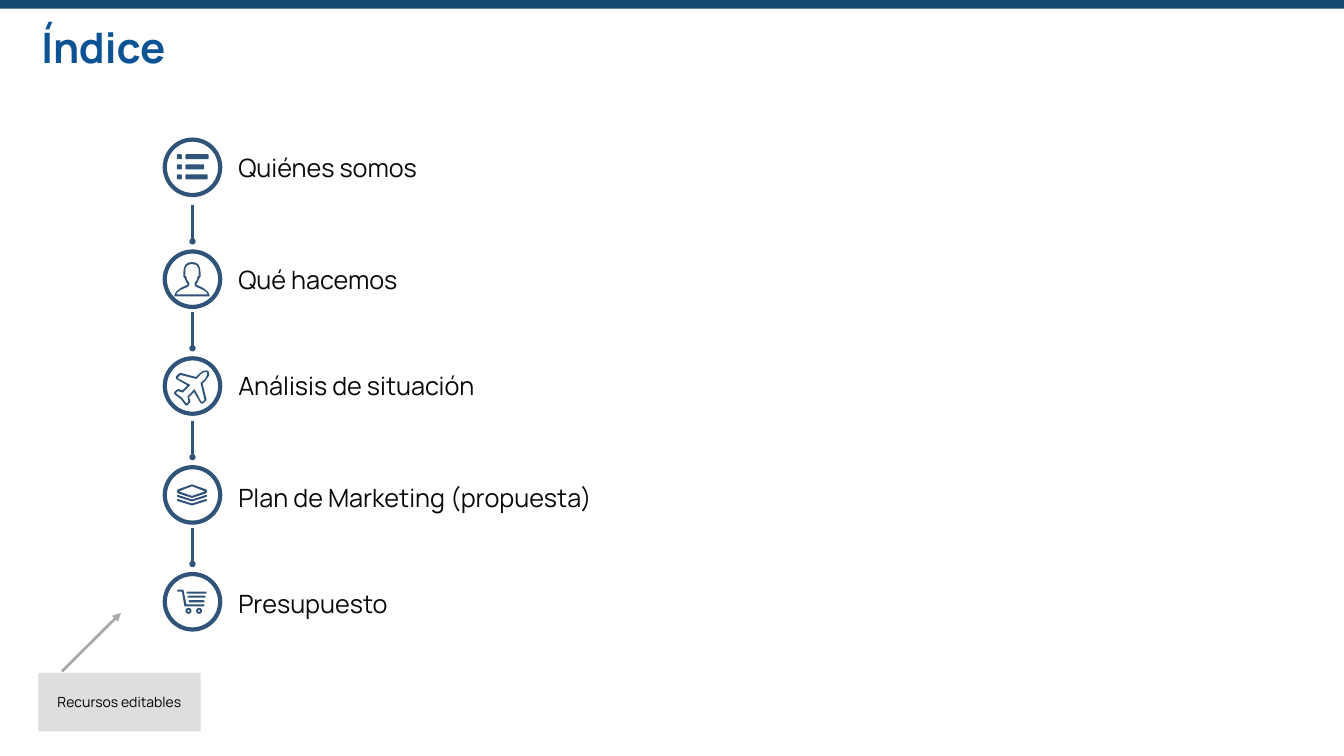
import pptx
import pptx.util
import pptx.oxml
import pptx.dml.color
import pptx.oxml.ns
from pptx.enum.shapes import MSO_CONNECTOR, MSO_SHAPE
from pptx.enum.text import MSO_ANCHOR, MSO_AUTO_SIZE, PP_ALIGN

Inches, Pt = pptx.util.Inches, pptx.util.Pt

FONT = "Manrope"
NAVY = "2F5379"
CENTER_X = 3.82
ICON_X = 3.81
CIRCLE = 1.1

SECTIONS = [
    ("Quiénes somos", 2.77, 2.92, 3.84),
    ("Qué hacemos", 4.99, 5.15, 8.02),
    ("Análisis de situación", 7.11, 7.24, 6.33),
    ("Plan de Marketing (propuesta)", 9.27, 9.47, 7.33),
    ("Presupuesto", 11.39, 11.57, 3.19),
]
LIST_ROWS = [(3.06, 0.46), (3.26, 0.37), (3.46, 0.44)]
PERSON = [
    [(0, 5.2), (0.07, 5.21), (0.13, 5.25), (0.16, 5.32), (0.17, 5.41),
     (0.17, 5.49), (0.14, 5.53), (0.12, 5.59), (0.09, 5.63), (0.09, 5.65),
     (0.22, 5.71), (0.32, 5.79), (0.35, 5.86), (0.35, 5.88)],
    [(0, 5.24), (0.06, 5.25), (0.1, 5.27), (0.13, 5.33), (0.13, 5.43),
     (0.14, 5.47), (0.11, 5.49), (0.1, 5.55), (0.05, 5.62), (0.06, 5.67),
     (0.08, 5.69), (0.22, 5.75), (0.29, 5.8), (0.31, 5.84)],
]
PLANE = [
    [(3.7, 8.05), (3.67, 8.03), (3.59, 7.92), (3.47, 7.83), (3.45, 7.8),
     (3.46, 7.78), (3.51, 7.73), (3.54, 7.72), (3.62, 7.75), (3.72, 7.65),
     (3.5, 7.52), (3.49, 7.5), (3.49, 7.47), (3.55, 7.41), (3.59, 7.4),
     (3.89, 7.48), (3.96, 7.41), (4.03, 7.36), (4.09, 7.35), (4.14, 7.36),
     (4.15, 7.45), (4.09, 7.54), (4.02, 7.61), (4.1, 7.93), (4.08, 7.96),
     (4.02, 8.01), (3.98, 8.0), (3.85, 7.78), (3.75, 7.88), (3.78, 7.96),
     (3.77, 7.99), (3.72, 8.04)],
    [(3.49, 7.8), (3.61, 7.89), (3.7, 8.01), (3.74, 7.97), (3.72, 7.87),
     (3.86, 7.72), (4.0, 7.98), (4.06, 7.94), (3.98, 7.6), (4.07, 7.52),
     (4.11, 7.44), (4.11, 7.39), (4.09, 7.38), (4.04, 7.39), (3.98, 7.43),
     (3.9, 7.52), (3.58, 7.44), (3.52, 7.5), (3.78, 7.64), (3.63, 7.79),
     (3.53, 7.76)],
]
SHEET = [
    [(0, 9.61), (0.28, 9.71), (0.3, 9.75), (0.28, 9.79), (0, 9.88)],
    [(0, 9.65), (0.26, 9.75), (0, 9.84)],
]
SHEET_EDGE = [(0, 9.91), (0.28, 9.82), (0.3, 9.83), (0.29, 9.86), (0, 9.95)]
CART = [(3.7, 11.99), (3.64, 11.7), (3.53, 11.7), (3.51, 11.72), (3.53, 11.74),
        (3.61, 11.74), (3.66, 12.03), (4.04, 12.03), (4.06, 12.01), (4.04, 11.99)]
CART_BARS = [(3.7, 11.74, 0.4), (3.72, 11.82, 0.36), (3.74, 11.91, 0.32)]
WHEELS = [3.68, 3.89]

prs = pptx.Presentation()
prs.slide_width, prs.slide_height = Inches(26.67), Inches(15)
s = prs.slides.add_slide(prs.slide_layouts[6])


def rgb(value):
    return pptx.dml.color.RGBColor.from_string(value)


def paint(sp, fill=None, line=None, width=0):
    sp.shadow.inherit = False
    if fill:
        sp.fill.solid()
        sp.fill.fore_color.rgb = rgb(fill)
    else:
        sp.fill.background()
    if line:
        sp.line.color.rgb = rgb(line)
        sp.line.width = Pt(width)
    else:
        sp.line.fill.background()
    return sp


def shape(kind, x, y, w, h, **look):
    sp = s.shapes.add_shape(kind, Inches(x), Inches(y), Inches(w), Inches(h))
    return paint(sp, **look)


def bar(x, y, w, h, roundness):
    sp = shape(MSO_SHAPE.ROUNDED_RECTANGLE, x, y, w, h, fill=NAVY)
    sp.adjustments[0] = roundness


def outline(contours):
    builder = None
    for contour in contours:
        points = [(Inches(x), Inches(y)) for x, y in contour]
        if builder is None:
            builder = s.shapes.build_freeform(*points[0])
        else:
            builder.move_to(*points[0])
        builder.add_line_segments(points[1:], close=True)
    paint(builder.convert_to_shape(), fill=NAVY)


def mirrored(half, dy=0):
    both = half + [(-x, y) for x, y in reversed(half)]
    return [(ICON_X + x, y + dy) for x, y in both]


def line(x1, y1, x2, y2, color, width, end):
    c = s.shapes.add_connector(MSO_CONNECTOR.STRAIGHT, Inches(x1), Inches(y1),
                               Inches(x2), Inches(y2))
    c.line.color.rgb = rgb(color)
    c.line.width = Pt(width)
    tail = pptx.oxml.parse_xml(f'<a:tailEnd {pptx.oxml.ns.nsdecls("a")} type="{end}"/>')
    c.line._get_or_add_ln().append(tail)
    c._element.spPr.append(pptx.oxml.parse_xml(f'<a:effectLst {pptx.oxml.ns.nsdecls("a")}/>'))


def write(sp, text, size, color, inset, anchor, bold=False, align=PP_ALIGN.LEFT):
    tf = sp.text_frame
    tf.word_wrap = True
    tf.vertical_anchor = anchor
    tf.margin_left = tf.margin_right = tf.margin_top = tf.margin_bottom = Inches(inset)
    tf.text = text
    p = tf.paragraphs[0]
    p.alignment = align
    r = p.runs[0]
    r.font.name, r.font.size, r.font.bold = FONT, Pt(size), bold
    r.font.color.rgb = rgb(color)
    return tf


def textbox(x, y, w, h, *args, **kwargs):
    sp = s.shapes.add_textbox(Inches(x), Inches(y), Inches(w), Inches(h))
    tf = write(sp, *args, **kwargs)
    tf.auto_size = MSO_AUTO_SIZE.SHAPE_TO_FIT_TEXT
    return tf


shape(MSO_SHAPE.RECTANGLE, -0.01, -0.03, 26.69, 0.2, fill="144973")
title = textbox(0.76, 0.47, 5.33, 1.02, "Índice", 60, "0B5394", 0.06,
                MSO_ANCHOR.MIDDLE, bold=True)
title.paragraphs[0].line_spacing = 0.9

for y, width in LIST_ROWS:
    bar(3.51, y, 0.1, 0.1, 0.22)
    bar(3.68, y, width, 0.1, 0.22)
outline([mirrored(half) for half in PERSON])
outline(PLANE)
outline([mirrored(half) for half in SHEET])
for dy in (0, 0.08):
    outline([mirrored(SHEET_EDGE, dy)])
for x in WHEELS:
    wheel = shape(MSO_SHAPE.DONUT, x, 12.06, 0.12, 0.12, fill=NAVY)
    wheel.adjustments[0] = 0.33
outline([CART])
for x, y, width in CART_BARS:
    bar(x, y, width, 0.04, 0.5)

note = shape(MSO_SHAPE.RECTANGLE, 0.76, 13.35, 3.22, 1.16, fill="DCDEE0")
write(note, "Recursos editables", 20, "000000", 0.06, MSO_ANCHOR.MIDDLE,
      align=PP_ALIGN.CENTER)
line(1.23, 13.32, 2.4, 12.16, "A6AAA9", 4, "triangle")

for i, (label, top, label_top, label_width) in enumerate(SECTIONS):
    shape(MSO_SHAPE.OVAL, CENTER_X - CIRCLE / 2, top, CIRCLE, CIRCLE, line=NAVY, width=6)
    if i:
        line(CENTER_X, top - 0.92, CENTER_X, top - 0.2, NAVY, 3, "oval")
    textbox(4.63, label_top, label_width, 0.81, label, 36, "0A0A0A", 0.1, MSO_ANCHOR.TOP)

prs.save("out.pptx")
